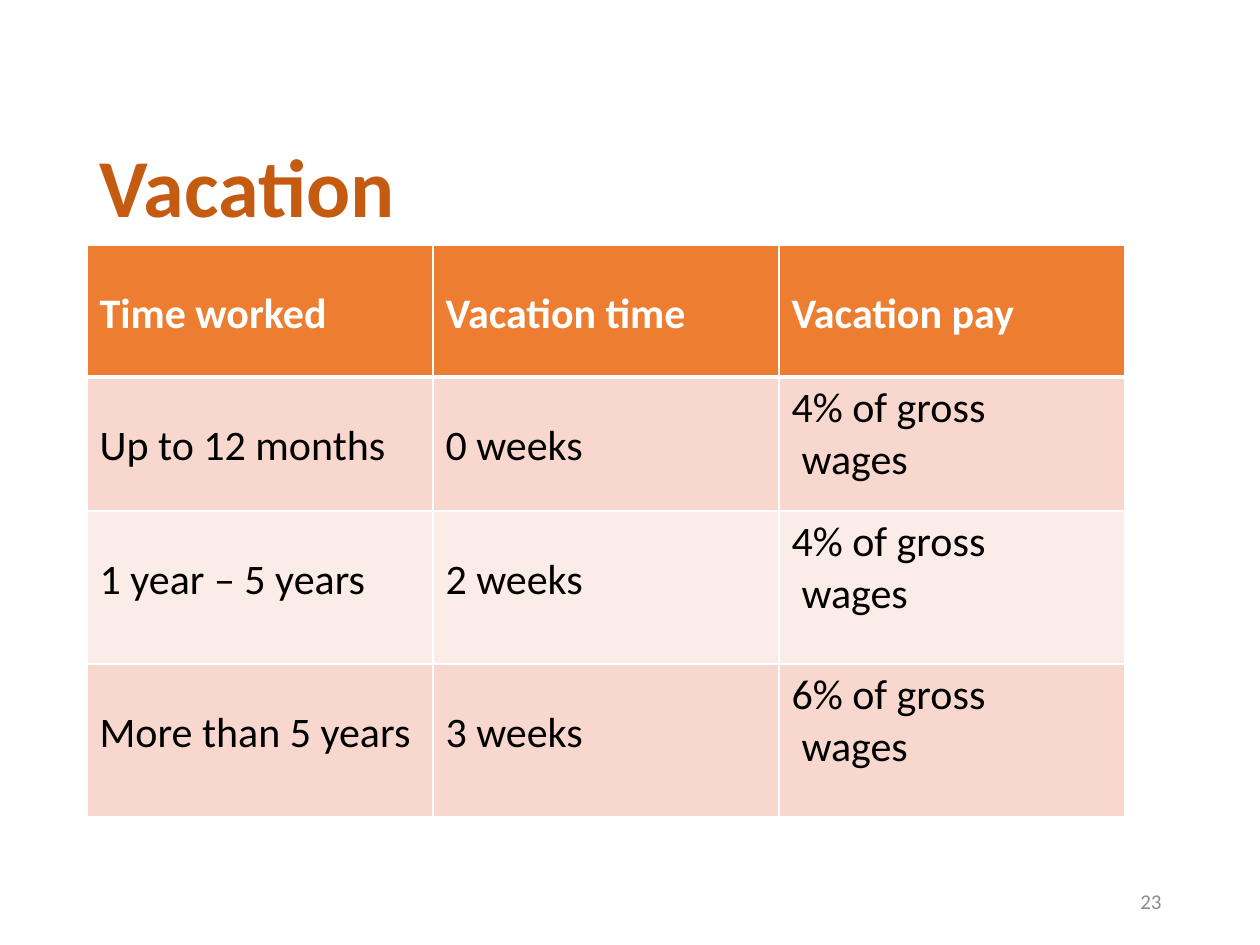
from dataclasses import dataclass

from lxml import etree
from pptx import Presentation
from pptx import util as u
from pptx.dml.color import RGBColor
from pptx.enum import text
from pptx.oxml.ns import qn

PX_PER_INCH = 126


@dataclass(frozen=True)
class Theme:
    font: str = "Calibri"
    title: str = "C55A11"
    header: str = "ED7D31"
    bands: tuple = ("F8D7CE", "FCECE8")
    white: str = "FFFFFF"
    body: str = "000000"
    number: str = "8C8C8C"
    title_size: int = 47
    table_size: int = 24
    number_size: int = 12


THEME = Theme()
ROWS = [
    ("Time worked", "Vacation time", "Vacation pay"),
    ("Up to 12 months", "0 weeks", "4% of gross\nwages"),
    ("1 year – 5 years", "2 weeks", "4% of gross\nwages"),
    ("More than 5 years", "3 weeks", "6% of gross\nwages"),
]
ROW_HEIGHTS = (132, 134, 153, 153)


def px(length):
    return u.Emu(round(length * u.Inches(1) / PX_PER_INCH))


def style(para, size, color, bold=False):
    para.font.name = THEME.font
    para.font.size = u.Pt(size)
    para.font.bold = bold
    para.font.color.rgb = RGBColor.from_string(color)


def add_title(page, box, wording):
    title = page.shapes.title
    title.left, title.top, title.width, title.height = map(px, box)
    frame = title.text_frame
    frame.text = wording
    frame.vertical_anchor = text.MSO_ANCHOR.BOTTOM
    frame.auto_size = text.MSO_AUTO_SIZE.NONE
    para = frame.paragraphs[0]
    para.alignment = text.PP_ALIGN.LEFT
    para.line_spacing = 0.9
    style(para, THEME.title_size, THEME.title, bold=True)


def add_borders(cell, **widths):
    """Draw white cell edges; the widths are in points."""
    props = cell._tc.get_or_add_tcPr()
    for side, width in widths.items():
        line = etree.SubElement(props, qn(f"a:ln{side}"), w=str(u.Pt(width)))
        fill = etree.SubElement(line, qn("a:solidFill"))
        etree.SubElement(fill, qn("a:srgbClr"), val=THEME.white)


def fill_cell(cell, wording, row):
    header = row == 0
    add_borders(cell, L=1, R=1, T=3 if row == 1 else 1, B=3 if header else 1)
    cell.fill.solid()
    color = THEME.header if header else THEME.bands[(row - 1) % 2]
    cell.fill.fore_color.rgb = RGBColor.from_string(color)

    # Single lines sit lower in the cell than two-line entries
    cell.text = wording
    paras = cell.text_frame.paragraphs
    cell.margin_top = px(44 if len(paras) == 1 else 6)
    for para in paras:
        style(para, THEME.table_size, THEME.white if header else THEME.body, header)
    for para in paras[1:]:
        para._p.get_or_add_pPr().set("marL", str(px(10)))


def add_vacation_table(page, box):
    left, top, width, height = map(px, box)
    table = page.shapes.add_table(len(ROWS), len(ROWS[0]), left, top, width, height).table
    for column in table.columns:
        column.width = px(box[2] / len(ROWS[0]))
    for row, (entries, row_height) in enumerate(zip(ROWS, ROW_HEIGHTS)):
        table.rows[row].height = px(row_height)
        for column, wording in enumerate(entries):
            fill_cell(table.cell(row, column), wording, row)


def add_page_number(page, box, number):
    frame = page.shapes.add_textbox(*map(px, box)).text_frame
    frame.word_wrap = True
    frame.vertical_anchor = text.MSO_ANCHOR.MIDDLE
    frame.text = str(number)
    para = frame.paragraphs[0]
    para.alignment = text.PP_ALIGN.RIGHT
    style(para, THEME.number_size, THEME.number)


def main():
    deck = Presentation()
    deck.slide_width, deck.slide_height = px(1260), px(945)
    page = deck.slides.add_slide(deck.slide_layouts.get_by_name("Title Only"))

    # Heading, entitlement table, footer
    add_title(page, (87, 136, 1086, 106), "Vacation")
    add_vacation_table(page, (87, 245, 1038, sum(ROW_HEIGHTS)))
    add_page_number(page, (890, 876, 284, 50), 23)
    deck.save("out.pptx")


if __name__ == "__main__":
    main()
